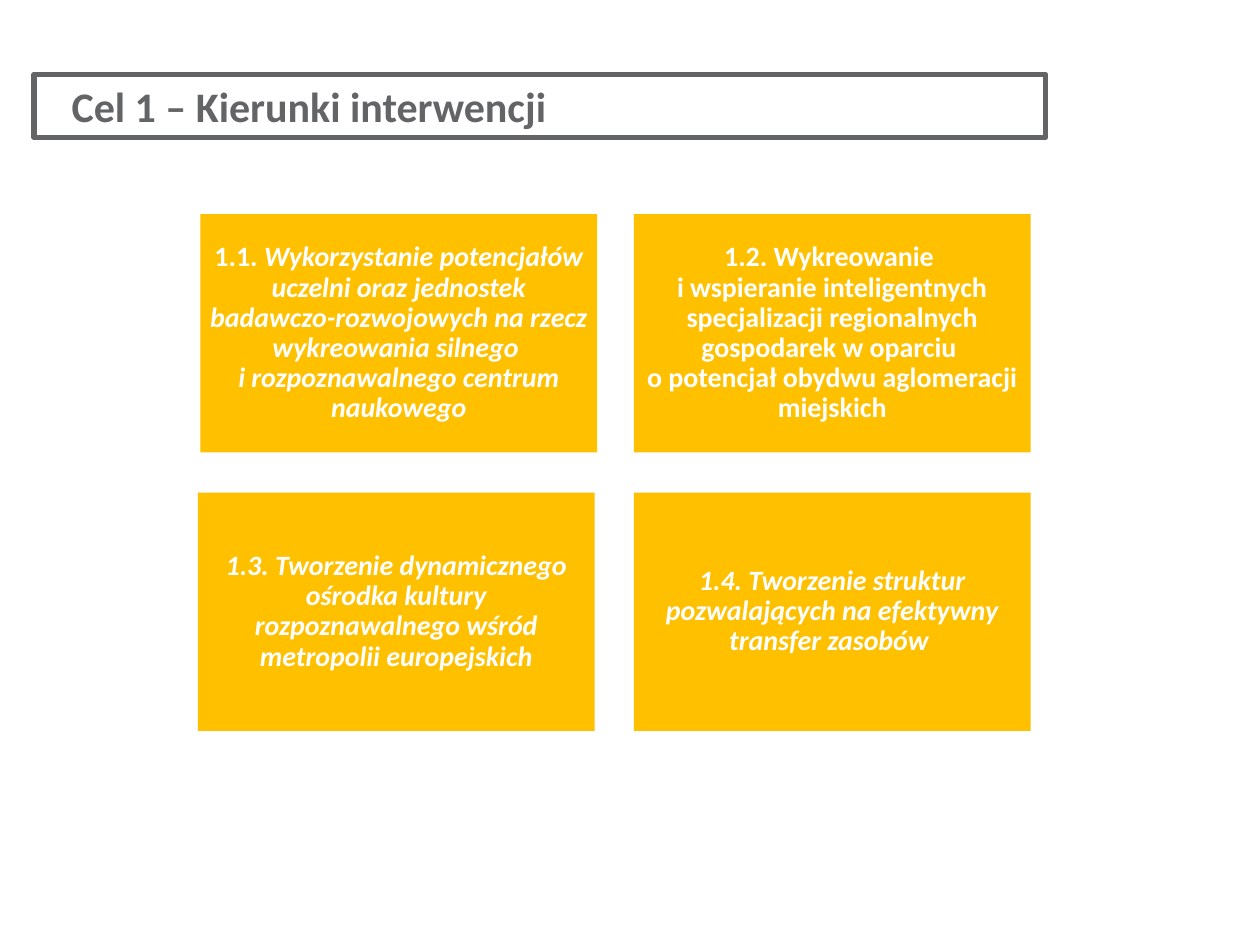
from copy import deepcopy
from typing import NamedTuple

from pptx import Presentation
from pptx.dml.color import RGBColor
from pptx.enum.shapes import MSO_SHAPE as Shape
from pptx.enum.text import MSO_ANCHOR as Anchor, MSO_AUTO_SIZE as AutoSize, PP_ALIGN as Align
from pptx.oxml.ns import qn
from pptx.util import Inches, Pt

FONT = "Calibri"
GOLD, GREY, WHITE = "FFC000", "636466", "FFFFFF"
CARD_WIDTH, CARD_HEIGHT = 3.15, 1.89
CARD_INSET = 0.07
TOP_ROW, BOTTOM_ROW = 1.7, 3.91
RIGHT_COLUMN = 5.03


class Span(NamedTuple):
    text: str
    italic: bool = False


class Card(NamedTuple):
    left: float
    top: float
    spans: tuple[Span, ...]


CARDS = (
    Card(1.59, TOP_ROW, (
        Span("1.1. "),
        Span("Wykorzystanie potencjałów uczelni oraz jednostek badawczo-rozwojowych "
             "na rzecz wykreowania silnego \ni rozpoznawalnego centrum naukowego", True),
    )),
    Card(RIGHT_COLUMN, TOP_ROW, (
        Span("1.2. Wykreowanie \ni wspieranie inteligentnych specjalizacji regionalnych "
             "gospodarek w oparciu \no potencjał obydwu aglomeracji miejskich"),
    )),
    Card(1.57, BOTTOM_ROW, (
        Span("1.3. Tworzenie dynamicznego ośrodka kultury rozpoznawalnego wśród "
             "metropolii europejskich", True),
    )),
    Card(RIGHT_COLUMN, BOTTOM_ROW, (
        Span("1.4. Tworzenie struktur pozwalających na efektywny transfer zasobów ", True),
    )),
)


def color(value: str) -> RGBColor:
    return RGBColor.from_string(value)


def format_run(run, size: float, font_color: str, italic: bool = False) -> None:
    font = run.font
    font.name, font.size, font.bold = FONT, Pt(size), True
    font.color.rgb = color(font_color)
    if italic:
        font.italic = True


def add_span(paragraph, span: Span) -> None:
    """Add one run per line, giving line breaks the format of the text."""
    for index, line in enumerate(span.text.split("\n")):
        if index:
            paragraph.add_line_break()
        run = paragraph.add_run()
        run.text = line
        format_run(run, 16, WHITE, span.italic)
        if index:
            line_break = paragraph._p.findall(qn("a:br"))[-1]
            line_break.append(deepcopy(run._r.rPr))


def add_card(slide, card: Card) -> None:
    shape = slide.shapes.add_shape(
        Shape.RECTANGLE, Inches(card.left), Inches(card.top),
        Inches(CARD_WIDTH), Inches(CARD_HEIGHT))
    shape.shadow.inherit = False
    shape.fill.solid()
    shape.fill.fore_color.rgb = color(GOLD)
    shape.line.fill.background()
    frame = shape.text_frame
    frame.word_wrap = True
    frame.vertical_anchor = Anchor.MIDDLE
    frame.margin_left = frame.margin_right = Inches(CARD_INSET)
    frame.margin_top = frame.margin_bottom = Inches(CARD_INSET)
    paragraph = frame.paragraphs[0]
    paragraph.alignment = Align.CENTER
    paragraph.line_spacing = 0.9
    for span in card.spans:
        add_span(paragraph, span)


def add_title(slide, text: str) -> None:
    box = slide.shapes.add_textbox(Inches(0.27), Inches(0.59), Inches(8.03), Inches(0.5))
    box.line.color.rgb = color(GREY)
    box.line.width = Pt(3)
    frame = box.text_frame
    frame.word_wrap = True
    frame.auto_size = AutoSize.SHAPE_TO_FIT_TEXT
    paragraph = frame.paragraphs[0]
    paragraph.text = text
    paragraph.alignment = Align.JUSTIFY
    paragraph.space_after = Pt(6)
    paragraph._p.get_or_add_pPr().set("marL", str(Inches(0.2)))
    format_run(paragraph.runs[0], 24, GREY)


def main() -> None:
    presentation = Presentation()
    presentation.slide_width, presentation.slide_height = Inches(10), Inches(7.5)
    slide = presentation.slides.add_slide(presentation.slide_layouts[6])
    for card in CARDS:
        add_card(slide, card)
    add_title(slide, "Cel 1 – Kierunki interwencji")
    presentation.save("out.pptx")


if __name__ == "__main__":
    main()
